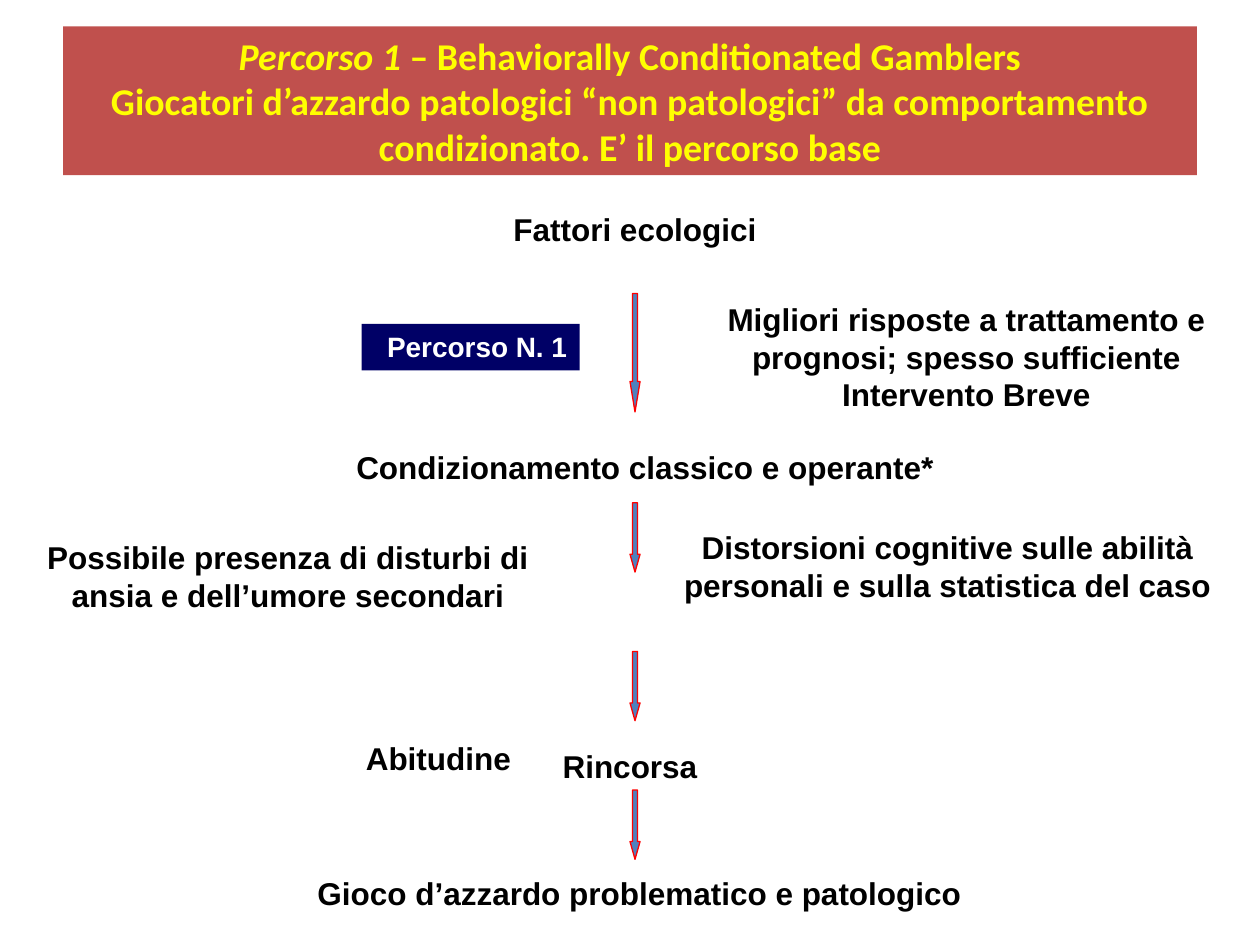
"""Build the slide on the first pathway of problem gambling."""
from copy import deepcopy

from pptx import Presentation
from pptx.dml.color import RGBColor
from pptx.enum.shapes import MSO_SHAPE as Shape
from pptx.enum.text import MSO_ANCHOR as Anchor, MSO_AUTO_SIZE as AutoSize, PP_ALIGN as Align
from pptx.util import Inches, Pt

THEME = {
    "title_fill": "C0504D", "title_text": "FFFF00", "paper": "FFFFFF", "ink": "000000",
    "tag_fill": "000066", "tag_text": "FFFFFF", "arrow_fill": "4F81BD", "arrow_line": "FF0000",
    "title_font": "Calibri", "body_font": "Arial",
    "title_size": 21.6, "body_size": 18, "tag_size": 16, "arrow_width": 0.75,
}

TITLE_BOX = (0.5, 0.21, 9, 1.18)
TITLE_RUNS = [
    ("Percorso 1", True),
    (" – Behaviorally Conditionated Gamblers", False),
    ("\n", False),
    ("Giocatori d’azzardo patologici “non patologici” da comportamento "
     "condizionato. E’ il percorso base", False),
]
STAGES = [
    ("Fattori ecologici", (3.9, 1.62, 2.28, 0.4)),
    ("Condizionamento classico e operante*", (2.64, 3.51, 4.96, 0.4)),
    ("Abitudine", (2.73, 5.82, 1.5, 0.4)),
    ("Rincorsa", (4.21, 5.88, 1.58, 0.4)),
    ("Gioco d’azzardo problematico e patologico", (2.32, 6.89, 5.51, 0.4)),
]
ARROW_LEFT, ARROW_WIDTH = 5, 0.08
ARROWS = [(2.33, 0.94), (3.99, 0.55), (5.17, 0.55), (6.27, 0.55)]
HEAD_SHARE = 0.257
TAG = ("Percorso N. 1", (2.87, 2.57, 1.73, 0.37))
REMARKS = [
    ("Migliori risposte a trattamento e prognosi; spesso sufficiente Intervento Breve",
     (5.31, 2.33, 4.72, 1.01)),
    ("Possibile presenza di disturbi di ansia e dell’umore secondari",
     (-0.04, 4.22, 4.65, 0.71)),
    ("Distorsioni cognitive sulle abilità personali e sulla statistica del caso",
     (5.16, 4.14, 4.72, 0.71)),
]


def color(name):
    return RGBColor.from_string(THEME[name])


def paint(shape, fill):
    shape.fill.solid()
    shape.fill.fore_color.rgb = color(fill)


def write(shape, runs, *, font="body_font", size="body_size", ink="ink",
          align=Align.CENTER, anchor=Anchor.TOP, auto_size=AutoSize.SHAPE_TO_FIT_TEXT):
    """Write (text, italic) runs into the shape; a newline is a line break."""
    frame = shape.text_frame
    frame.word_wrap = True
    frame.auto_size = auto_size
    frame.vertical_anchor = anchor
    paragraph = frame.paragraphs[0]
    paragraph.alignment = align
    for text, italic in runs:
        if text == "\n":
            paragraph.add_line_break()
            paragraph._p[-1].append(deepcopy(run.font._element))
            continue
        run = paragraph.add_run()
        run.text = text
        run.font.name = THEME[font]
        run.font.size = Pt(THEME[size])
        run.font.bold = True
        run.font.italic = italic
        run.font.color.rgb = color(ink)


def add_label(slide, text, box, fill="paper", **text_format):
    shape = slide.shapes.add_textbox(*map(Inches, box))
    paint(shape, fill)
    write(shape, [(text, False)], **text_format)


def add_arrow(slide, top, height):
    box = (ARROW_LEFT, top, ARROW_WIDTH, height)
    shape = slide.shapes.add_shape(Shape.DOWN_ARROW, *map(Inches, box))
    shape.shadow.inherit = False
    shape.adjustments[0] = 0.5
    shape.adjustments[1] = HEAD_SHARE * height / ARROW_WIDTH
    paint(shape, "arrow_fill")
    shape.line.color.rgb = color("arrow_line")
    shape.line.width = Pt(THEME["arrow_width"])


def main():
    presentation = Presentation()
    presentation.slide_width, presentation.slide_height = Inches(10), Inches(7.5)
    slide = presentation.slides.add_slide(presentation.slide_layouts[5])

    title = slide.shapes.title
    title.left, title.top, title.width, title.height = map(Inches, TITLE_BOX)
    paint(title, "title_fill")
    write(title, TITLE_RUNS, font="title_font", size="title_size", ink="title_text",
          anchor=Anchor.MIDDLE, auto_size=AutoSize.NONE)

    for text, box in STAGES:
        add_label(slide, text, box)
    for top, height in ARROWS:
        add_arrow(slide, top, height)
    add_label(slide, *TAG, fill="tag_fill", size="tag_size", ink="tag_text", align=Align.RIGHT)
    for text, box in REMARKS:
        add_label(slide, text, box)

    presentation.save("out.pptx")


if __name__ == "__main__":
    main()
